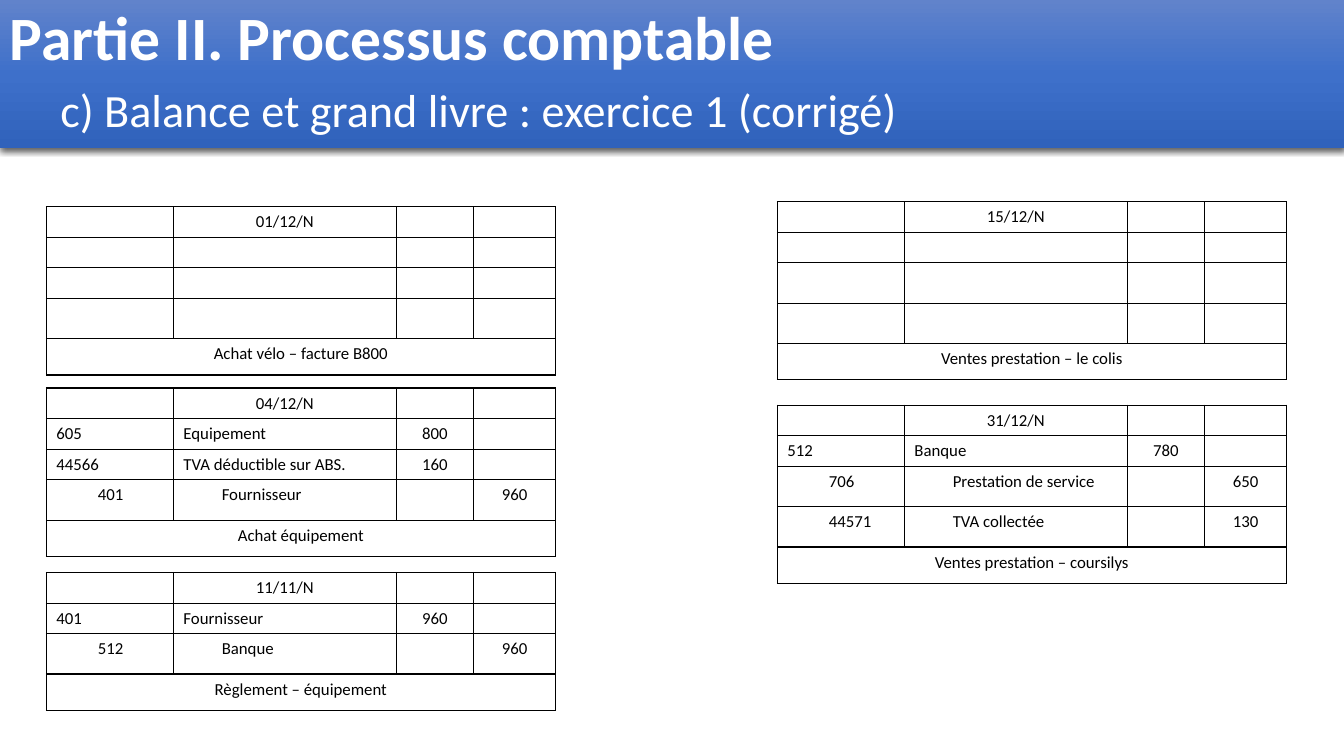
from lxml import etree
from pptx import Presentation
from pptx.dml.color import RGBColor
from pptx.enum.shapes import MSO_SHAPE
from pptx.enum.text import MSO_ANCHOR, PP_ALIGN
from pptx.oxml import parse_xml
from pptx.oxml.ns import nsdecls, qn
from pptx.util import Inches, Pt

RECTANGLE = MSO_SHAPE.RECTANGLE
MIDDLE = MSO_ANCHOR.MIDDLE
LEFT, CENTER = PP_ALIGN.LEFT, PP_ALIGN.CENTER

COLORS = {
    "text": "000000", "border": "000000", "shadow": "000000", "title": "FFFFFF",
    "band_top": "6183CB", "band_middle": "3E70CA", "band_bottom": "3062BB",
}
BAND_STOPS = [(0, "band_top"), (50, "band_middle"), (100, "band_bottom")]

COLUMN_WIDTHS = [0.41, 0.85, 0.38, 1.83, 0.77, 0.81]
ROW_HEIGHTS = {"date": 0.3, "debit": 0.3, "credit": 0.4, "label": 0.36}
# First and last column of each visible box in a row
ENTRY_BOXES = [(0, 1), (2, 3), (4, 4), (5, 5)]
LABEL_BOXES = [(0, 5)]

LEFT_X, RIGHT_X = 0.46, 7.71
# Position, date, lines (kind, account, name, amount), label
ENTRIES = [
    (LEFT_X, 2.05, "01/12/N",
     [("debit", "", "", ""), ("debit", "", "", ""), ("credit", "", "", "")],
     "Achat vélo – facture B800"),
    (LEFT_X, 3.85, "04/12/N",
     [("debit", "605", "Equipement", "800"),
      ("debit", "44566", "TVA déductible sur ABS.", "160"),
      ("credit", "401", "Fournisseur", "960")],
     "Achat équipement"),
    (RIGHT_X, 2.0, "15/12/N",
     [("debit", "", "", ""), ("credit", "", "", ""), ("credit", "", "", "")],
     "Ventes prestation – le colis"),
    (LEFT_X, 5.68, "11/11/N",
     [("debit", "401", "Fournisseur", "960"), ("credit", "512", "Banque", "960")],
     "Règlement – équipement"),
    (RIGHT_X, 4.02, "31/12/N",
     [("debit", "512", "Banque", "780"),
      ("credit", "706", "Prestation de service", "650"),
      ("credit", "44571", "TVA collectée", "130")],
     "Ventes prestation – coursilys"),
]


class JournalSlide:
    """Draws the title band and the journal entries on one slide."""

    font_name = "Calibri"
    cell_size = Pt(12)
    border_width = Pt(1)

    def __init__(self, slide):
        self.slide = slide

    def add_run(self, paragraph, text, color, **formats):
        run = paragraph.add_run()
        run.text = text
        run.font.color.rgb = RGBColor.from_string(COLORS[color])
        for name, value in {"name": self.font_name, **formats}.items():
            setattr(run.font, name, value)

    def title_band(self, title, subtitle):
        shape = self.slide.shapes.add_shape(
            RECTANGLE, 0, 0, Inches(13.33), Inches(1.47))
        shape.line.fill.background()
        self.fill_band(shape)
        self.shade_band(shape)
        frame = shape.text_frame
        frame.word_wrap = True
        frame.vertical_anchor = MIDDLE
        paragraph = frame.paragraphs[0]
        paragraph.alignment = LEFT
        paragraph.line_spacing = 0.9
        heading = {"size": Pt(44), "bold": True}
        self.add_run(paragraph, title, "title", **heading)
        paragraph.add_line_break()
        self.add_run(paragraph, "\t", "title", **heading)
        self.add_run(paragraph, subtitle, "title", size=Pt(33), bold=False)

    def fill_band(self, shape):
        shape.fill.gradient()
        shape.fill.gradient_angle = 270
        stop_list = shape._element.spPr.find(qn("a:gradFill")).find(qn("a:gsLst"))
        for stop in list(stop_list):
            stop_list.remove(stop)
        for position, color in BAND_STOPS:
            stop_list.append(parse_xml(
                f'<a:gs {nsdecls("a")} pos="{position * 1000}">'
                f'<a:srgbClr val="{COLORS[color]}"/></a:gs>'))

    def shade_band(self, shape):
        shape.shadow.inherit = False
        shape._element.spPr.find(qn("a:effectLst")).append(parse_xml(
            f'<a:outerShdw {nsdecls("a")} blurRad="{Pt(4.5)}" dist="{Pt(1.5)}" '
            f'dir="5400000" algn="ctr" rotWithShape="0">'
            f'<a:srgbClr val="{COLORS["shadow"]}"><a:alpha val="63000"/>'
            f'</a:srgbClr></a:outerShdw>'))

    def journal_entry(self, left, top, date, lines, label):
        kinds = ["date", *(line[0] for line in lines), "label"]
        heights = [ROW_HEIGHTS[kind] for kind in kinds]
        table = self.slide.shapes.add_table(
            len(kinds), len(COLUMN_WIDTHS), Inches(left), Inches(top),
            Inches(sum(COLUMN_WIDTHS)), Inches(sum(heights))).table
        table.first_row = table.horz_banding = False
        for column, width in zip(table.columns, COLUMN_WIDTHS):
            column.width = Inches(width)
        for row, height in zip(table.rows, heights):
            row.height = Inches(height)

        texts = {(0, 2): date, (len(kinds) - 1, 0): label}
        for index, (kind, account, name, amount) in enumerate(lines, start=1):
            shift = 1 if kind == "credit" else 0
            texts[index, shift] = account
            texts[index, 2 + shift] = name
            texts[index, 4 + shift] = amount

        for index, kind in enumerate(kinds):
            boxes = LABEL_BOXES if kind == "label" else ENTRY_BOXES
            for first, last in boxes:
                merged = kind != "credit" and first < last
                if merged:
                    table.cell(index, first).merge(table.cell(index, last))
                for column in range(first, last + 1):
                    cell = table.cell(index, column)
                    centered = kind in ("date", "label") or column > 3
                    self.cell_text(cell, texts.get((index, column), ""),
                                   CENTER if centered else LEFT)
                    self.cell_borders(cell, {
                        "lnL": column == first,
                        "lnR": column == last or (merged and column == first),
                        "lnT": True, "lnB": True})
                    cell.fill.background()

    def cell_text(self, cell, text, alignment):
        paragraph = cell.text_frame.paragraphs[0]
        if text:
            paragraph.alignment = alignment
            self.add_run(paragraph, text, "text", size=self.cell_size)
        elif not cell.is_spanned:
            end = etree.SubElement(paragraph._p, qn("a:endParaRPr"))
            end.set("sz", str(int(self.cell_size.pt * 100)))

    def cell_borders(self, cell, sides):
        properties = cell._tc.get_or_add_tcPr()
        solid = f'<a:solidFill><a:srgbClr val="{COLORS["border"]}"/></a:solidFill>'
        for side, visible in sides.items():
            properties.append(parse_xml(
                f'<a:{side} {nsdecls("a")} w="{self.border_width}">'
                f'{solid if visible else "<a:noFill/>"}</a:{side}>'))


def main():
    presentation = Presentation()
    presentation.slide_width = Inches(13.33)
    presentation.slide_height = Inches(7.5)
    blank_layout = presentation.slide_layouts[6]
    journal = JournalSlide(presentation.slides.add_slide(blank_layout))
    journal.title_band("Partie II. Processus comptable",
                       "c) Balance et grand livre : exercice 1 (corrigé)")
    for entry in ENTRIES:
        journal.journal_entry(*entry)
    presentation.save("out.pptx")


if __name__ == "__main__":
    main()
